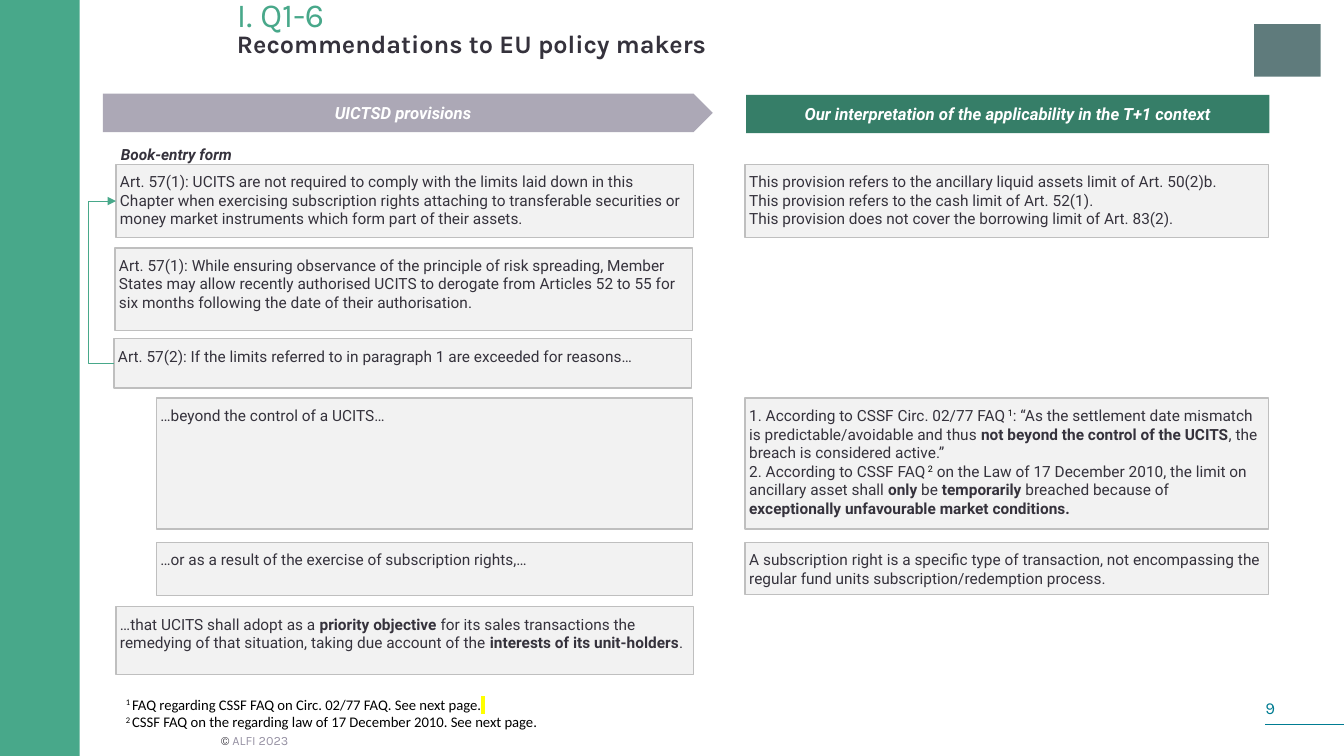
from lxml.etree import SubElement
from pptx import Presentation
from pptx.dml.color import RGBColor
from pptx.enum.shapes import MSO_CONNECTOR, MSO_SHAPE
from pptx.enum.text import MSO_ANCHOR, PP_ALIGN
from pptx.oxml.ns import qn
from pptx.util import Inches, Pt

INK = "35323C"
BLACK = "000000"
GREEN = "48A88A"
TEAL = "007C92"
BOLD = {"bold": True}
RAISED = {"raised": True, "colour": BLACK}


def paint(fill, colour):
    fill.solid()
    fill.fore_color.rgb = RGBColor.from_string(colour)


def write(shape, paragraphs, size=11, font="Roboto", colour=INK, bold=False,
          italic=False, margins=(0.04, 0.08), anchor=MSO_ANCHOR.TOP,
          align=PP_ALIGN.LEFT, spacing=None):
    """Fill a shape with paragraphs, each a list of (text, run format) pairs."""
    frame = shape.text_frame
    frame.word_wrap = True
    frame.vertical_anchor = anchor
    frame.margin_left = frame.margin_right = Inches(margins[0])
    frame.margin_top = frame.margin_bottom = Inches(margins[1])
    for index, pieces in enumerate(paragraphs):
        para = frame.add_paragraph() if index else frame.paragraphs[0]
        para.alignment = align
        para.line_spacing = spacing
        for text, look in pieces:
            span = para.add_run()
            span.text = text
            span.font.size = Pt(look.get("size", size))
            span.font.bold = look.get("bold", bold)
            span.font.italic = italic
            paint(span.font.fill, look.get("colour", colour))
            properties = span.font.fill._xPr
            if look.get("raised"):
                properties.set("baseline", "30000")
            if "highlight" in look:
                marker = SubElement(properties, qn("a:highlight"))
                SubElement(marker, qn("a:srgbClr"), val=look["highlight"])
            span.font.name = font


deck = Presentation()
deck.slide_width, deck.slide_height = Inches(13.33), Inches(7.5)
page = deck.slides.add_slide(deck.slide_layouts[6])
shapes = page.shapes

# Side band and plain emblem
for left, top, width, height, colour in [
    (0, 0, 0.79, 7.5, GREEN),
    (12.44, 0.24, 0.66, 0.52, "5F7B7C"),
]:
    block = shapes.add_shape(MSO_SHAPE.RECTANGLE, Inches(left), Inches(top),
                             Inches(width), Inches(height))
    block.shadow.inherit = False
    paint(block.fill, colour)
    block.line.fill.background()

# Column headers
for kind, left, top, width, colour, label in [
    (MSO_SHAPE.PENTAGON, 1.02, 0.93, 6.05, "ACA8B6", "UICTSD provisions"),
    (MSO_SHAPE.RECTANGLE, 7.4, 0.94, 5.19, "367E68",
     "Our interpretation of the applicability in the T+1 context"),
]:
    header = shapes.add_shape(kind, Inches(left), Inches(top),
                              Inches(width), Inches(0.38))
    header.shadow.inherit = False
    paint(header.fill, colour)
    header.line.fill.background()
    write(header, [[(label, {})]], size=12, colour="FFFFFF", bold=True, italic=True,
          margins=(0.08, 0.08), anchor=MSO_ANCHOR.MIDDLE, align=PP_ALIGN.CENTER)

# Provisions on the left, interpretations on the right
cards = {}
for name, left, top, width, height, paragraphs in [
    ("rights", 1.15, 1.63, 5.73, 0.73, [[(
        "Art. 57(1): UCITS are not required to comply with the limits laid down in this "
        "Chapter when exercising subscription rights attaching to transferable securities "
        "or money market instruments which form part of their assets.", {})]]),
    ("new funds", 1.14, 2.46, 5.73, 0.82, [[(
        "Art. 57(1): While ensuring observance of the principle of risk spreading, Member "
        "States may allow recently authorised UCITS to derogate from Articles 52 to 55 for "
        "six months following the date of their authorisation.", {})]]),
    ("excess", 1.13, 3.36, 5.73, 0.49, [[(
        "Art. 57(2): If the limits referred to in paragraph 1 are exceeded for reasons…",
        {})]]),
    ("control", 1.55, 3.95, 5.32, 1.3, [[("…beyond the control of a UCITS…", {})]]),
    ("exercise", 1.55, 5.38, 5.32, 0.53, [[(
        "…or as a result of the exercise of subscription rights,…", {})]]),
    ("objective", 1.15, 6.02, 5.73, 0.67, [[
        ("…that UCITS shall adopt as a ", {}),
        ("priority objective ", BOLD),
        ("for its sales transactions the remedying of that situation, "
         "taking due account of the ", {}),
        ("interests of its unit-holders", BOLD),
        (".", {})]]),
    ("limits view", 7.39, 1.63, 5.19, 0.73, [
        [("This provision refers to the ancillary liquid assets limit of Art. 50(2)b.", {})],
        [("This provision refers to the cash limit of Art. 52(1).", {})],
        [("This provision does not cover the borrowing limit of Art. 83(2).", {})]]),
    ("control view", 7.39, 3.95, 5.19, 1.3, [
        [("1. According to CSSF Circ. 02/77 FAQ", {}),
         (" 1", RAISED),
         (": “As the settlement date mismatch is predictable/avoidable and thus ", {}),
         ("not beyond the control of the UCITS", BOLD),
         (", the breach is considered active.”", {})],
        [("2. According to CSSF FAQ", {}),
         (" 2", RAISED),
         (" on the Law of 17 December 2010, the limit on ancillary asset shall ", {}),
         ("only", BOLD),
         (" be ", {}),
         ("temporarily", BOLD),
         (" breached because of ", {}),
         ("exceptionally unfavourable market conditions.", BOLD)]]),
    ("exercise view", 7.39, 5.38, 5.19, 0.52, [[(
        "A subscription right is a specific type of transaction, not encompassing the "
        "regular fund units subscription/redemption process.", {})]]),
]:
    card = shapes.add_shape(MSO_SHAPE.RECTANGLE, Inches(left), Inches(top),
                            Inches(width), Inches(height))
    card.shadow.inherit = False
    paint(card.fill, "F2F2F2")
    paint(card.line.fill, "BFBFBF")
    card.line.width = Pt(1)
    write(card, paragraphs)
    cards[name] = card

# Page number rule, and arrow from the excess card back to the rights card
rule = shapes.add_connector(MSO_CONNECTOR.STRAIGHT, Inches(13.33), Inches(7.19),
                            Inches(12.55), Inches(7.19))
arrow = shapes.add_connector(MSO_CONNECTOR.ELBOW, Inches(1.13), Inches(3.61),
                             Inches(1.15), Inches(1.99))
left_side = 1
arrow.begin_connect(cards["excess"], left_side)
arrow.end_connect(cards["rights"], left_side)
for connector, colour in [(rule, TEAL), (arrow, GREEN)]:
    paint(connector.line.fill, colour)
    connector.line.width = Pt(0.5)
    SubElement(connector._element.spPr, qn("a:effectLst"))
outline = arrow._element.spPr
SubElement(outline.find(qn("a:ln")), qn("a:tailEnd"), type="triangle")
bend = outline.find(qn("a:prstGeom")).find(qn("a:avLst"))
SubElement(bend, qn("a:gd"), name="adj1", fmla="val -1275000")

# Free text
for left, top, width, height, paragraphs, look in [
    (2.35, 0.02, 8.62, 0.58,
     [[("I. Q1-6", {"size": 24, "colour": GREEN})],
      [("Recommendations to EU policy makers", BOLD)]],
     {"size": 18, "font": "Karla", "margins": (0, 0), "spacing": 0.8}),
    (1.1, 1.39, 1.4, 0.29, [[("Book-entry form", {})]],
     {"bold": True, "italic": True, "margins": (0.1, 0.05)}),
    (1.15, 6.85, 6.67, 0.45,
     [[("1 ", RAISED),
       ("FAQ regarding CSSF FAQ on Circ. 02/77 FAQ. See next page.", {}),
       (" ", {"highlight": "FFFF00"})],
      [("2 ", RAISED),
       ("CSSF FAQ on the regarding law of 17 December 2010. See next page.", {})]],
     {"size": 10.5, "font": "Calibri", "colour": BLACK, "margins": (0.1, 0.05)}),
    (2.19, 7.21, 3.05, 0.27, [[("© ", {}), ("ALFI 2023", {"colour": "9792A4"})]],
     {"size": 9, "font": "Karla", "margins": (0, 0.05), "anchor": MSO_ANCHOR.MIDDLE}),
    (12.55, 6.92, 0.18, 0.2, [[("9", {})]],
     {"size": 12, "font": "Karla", "colour": TEAL, "margins": (0, 0),
      "anchor": MSO_ANCHOR.MIDDLE}),
]:
    box = shapes.add_textbox(Inches(left), Inches(top), Inches(width), Inches(height))
    write(box, paragraphs, **look)

deck.save("out.pptx")
